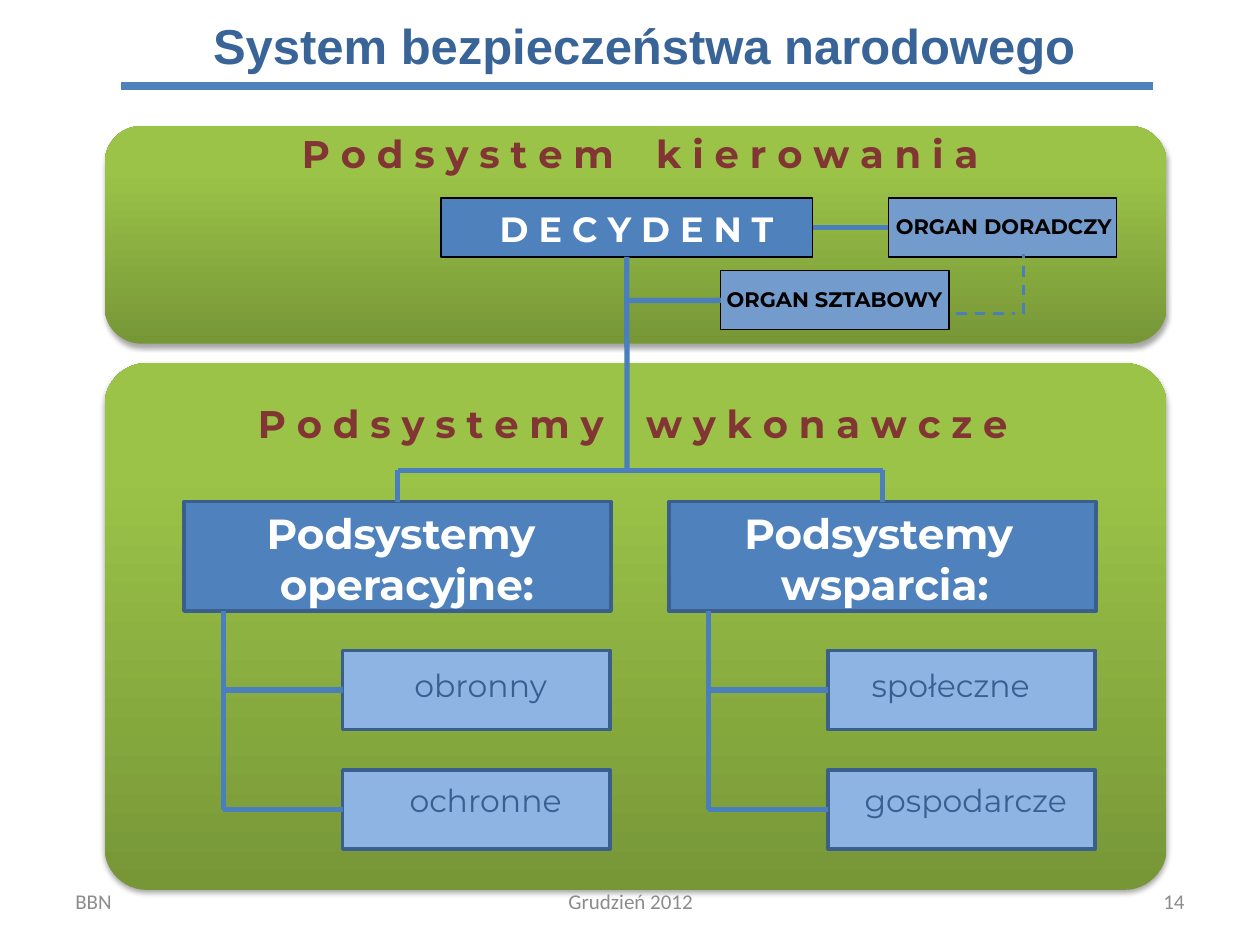
"""Build the slide on the national security system."""
import lxml.etree
import pptx
import pptx.dml.color
import pptx.enum.dml
import pptx.enum.shapes
import pptx.enum.text
import pptx.oxml
import pptx.oxml.ns
import pptx.util

Cm = pptx.util.Cm
Pt = pptx.util.Pt
RGBColor = pptx.dml.color.RGBColor
ALIGN = pptx.enum.text.PP_ALIGN
ANCHOR = pptx.enum.text.MSO_ANCHOR
SHAPE = pptx.enum.shapes.MSO_SHAPE
qn = pptx.oxml.ns.qn

TITLE_BLUE = RGBColor(0x39, 0x64, 0x97)
BLUE = RGBColor(0x4F, 0x81, 0xBD)
LINE_BLUE = RGBColor(0x4B, 0x7E, 0xBC)
BORDER_BLUE = RGBColor(0x3A, 0x5F, 0x8C)
ORGAN_BLUE = RGBColor(0x73, 0x9B, 0xCB)
LIGHT_BLUE = RGBColor(0x8E, 0xB4, 0xE3)
TEXT_BLUE = RGBColor(0x37, 0x60, 0x92)
DARK_GREEN = RGBColor(0x77, 0x97, 0x37)
LIGHT_GREEN = RGBColor(0x9B, 0xC3, 0x48)
MAROON = RGBColor(0x82, 0x36, 0x34)
GREY = RGBColor(0x8C, 0x8C, 0x8C)
WHITE = RGBColor(0xFF, 0xFF, 0xFF)
BLACK = RGBColor(0, 0, 0)

TITLE = {"name": "Arial", "size": Pt(28), "bold": True}
HEADING = {"name": "Montserrat", "size": Pt(22), "bold": True}
GROUP = {"name": "Montserrat", "size": Pt(24), "bold": True}
DECISION = {"name": "Montserrat", "size": Pt(20), "bold": True}
ORGAN = {"name": "Montserrat", "size": Pt(12), "bold": True}
MEMBER = {"name": "Montserrat", "size": Pt(18)}
FOOTER = {"name": "Calibri", "size": Pt(12)}

SHADOW = (
    '<a:effectLst xmlns:a="http://schemas.openxmlformats.org/drawingml/2006/main">'
    '<a:outerShdw blurRad="40000" dist="23000" dir="5400000" rotWithShape="0">'
    '<a:srgbClr val="000000"><a:alpha val="35000"/></a:srgbClr>'
    "</a:outerShdw></a:effectLst>"
)

GROUPS = [
    (1.6, "Podsystemy \voperacyjne:", -0.1,
     [("obronny", (0.38, 0.2, 4.8, 1.29)), ("ochronne", (0.38, 0.1, 5, 1.29))]),
    (11.38, "Podsystemy \vwsparcia:", -0.25,
     [("społeczne", (-0.18, 0.2, 5.31, 1.29)), ("gospodarcze", (-0.46, 0.1, 6.48, 1.29))]),
]


def inside(box, offset):
    """Return a box whose offset is measured from the corner of another box."""
    return (box[0] + offset[0], box[1] + offset[1], *offset[2:])


def add_text(slide, box, words, formats, color, align=ALIGN.CENTER, anchor=ANCHOR.TOP):
    """Add a text box; words after the first are set apart by one widened space."""
    frame = slide.shapes.add_textbox(*map(Cm, box)).text_frame
    frame.word_wrap = True
    frame.vertical_anchor = anchor
    paragraph = frame.paragraphs[0]
    paragraph.alignment = align
    paragraph.text = words[0]
    for word in words[1:]:
        gap = paragraph.add_run()
        gap.text = " "
        gap.font._element.set("spc", "1800")
        paragraph.add_run().text = word
    for run in paragraph.runs:
        for name, value in formats.items():
            setattr(run.font, name, value)
        run.font.color.rgb = color


def add_box(slide, box, fill, border, width):
    """Add a plain rectangle."""
    shape = slide.shapes.add_shape(SHAPE.RECTANGLE, *map(Cm, box))
    shape.shadow.inherit = False
    shape.fill.solid()
    shape.fill.fore_color.rgb = fill
    shape.line.color.rgb = border
    shape.line.width = Pt(width)
    return shape


def add_line(slide, start, end, color=LINE_BLUE, width=3, begin=None, finish=None):
    """Add a straight line, joined to a (shape, site) pair at either end if given."""
    connector = slide.shapes.add_connector(
        pptx.enum.shapes.MSO_CONNECTOR.STRAIGHT, *map(Cm, (*start, *end)))
    connector.line.color.rgb = color
    connector.line.width = Pt(width)
    lxml.etree.SubElement(connector._element.spPr, qn("a:effectLst"))
    if begin:
        connector.begin_connect(*begin)
    if finish:
        connector.end_connect(*finish)
    return connector


def add_panel(slide, box, rounding):
    """Add a green rounded panel with a soft shadow."""
    panel = slide.shapes.add_shape(SHAPE.ROUNDED_RECTANGLE, *map(Cm, box))
    panel.adjustments[0] = rounding
    panel.fill.gradient()
    panel.fill.gradient_angle = 90
    stops = zip(panel.fill.gradient_stops, (DARK_GREEN, LIGHT_GREEN), (0, 0.8))
    for stop, color, position in stops:
        stop.color.rgb = color
        stop.position = position
    panel.line.fill.background()
    panel._element.spPr.append(pptx.oxml.parse_xml(SHADOW))


def add_title(slide, box):
    """Add the title and the rule below it."""
    left, top = box[:2]
    add_text(slide, box, ["System bezpieczeństwa narodowego"], TITLE, TITLE_BLUE)
    add_line(slide, (left + 0.76, top + 1.55), (left + 21.56, top + 1.55), BLUE, 4.5)


def add_steering_panel(slide, box):
    """Add the steering subsystem and return the decision maker's rectangle."""
    left, top = box[:2]
    add_panel(slide, box, 0.17)
    add_text(slide, inside(box, (0.99, -0.05, 19.61, 1.19)),
             ["P o d s y s t e m", "k i e r o w a n i a"], HEADING, MAROON)
    decision = add_box(slide, inside(box, (6.78, 1.45, 7.49, 1.19)), BLUE, BLACK, 0.75)
    staff = add_box(slide, inside(box, (12.42, 2.92, 4.6, 1.19)), ORGAN_BLUE, BLACK, 0.75)
    advisers = add_box(slide, inside(box, (15.8, 1.45, 4.6, 1.19)), ORGAN_BLUE, BLACK, 0.75)
    add_line(slide, (left + 14.27, top + 2.05), (left + 15.8, top + 2.05),
             begin=(decision, 3), finish=(advisers, 1))
    add_line(slide, (left + 10.53, top + 3.52), (left + 12.42, top + 3.52),
             finish=(staff, 1))
    dashes = [((17.17, 3.78), (18.36, 3.78)), ((18.52, 3.78), (18.52, 2.59))]
    for start, end in dashes:
        dash = add_line(slide, inside(box, start), inside(box, end), width=1.5)
        dash.line.dash_style = pptx.enum.dml.MSO_LINE.DASH
    add_text(slide, inside(box, (7.32, 1.52, 6.81, 1.09)),
             ["D E C Y D E N T"], DECISION, WHITE)
    add_text(slide, inside(box, (12.29, 3.12, 5.46, 0.76)),
             ["ORGAN SZTABOWY"], ORGAN, BLACK, ALIGN.LEFT)
    add_text(slide, inside(box, (15.7, 1.65, 5.33, 0.76)),
             ["ORGAN DORADCZY"], ORGAN, BLACK, ALIGN.LEFT)
    return decision


def add_group(slide, box, title, title_shift, members):
    """Add a group's heading rectangle, its spine and its members."""
    left, top, width, height = box
    head = add_box(slide, box, BLUE, BORDER_BLUE, 2)
    add_text(slide, (left + title_shift, top, 9.19, 2.31), [title], GROUP, WHITE)
    middle = left + width / 2
    add_line(slide, (middle, top - 0.63), (middle, top), finish=(head, 0))
    spine = left + 0.79
    add_line(slide, (spine, top + height), (spine, top + 6.21))
    for index, (name, offset) in enumerate(members):
        member_box = (left + 3.2, top + 3 + index * 2.41, 5.39, 1.6)
        member = add_box(slide, member_box, LIGHT_BLUE, BORDER_BLUE, 2)
        center = member_box[1] + 0.8
        add_line(slide, (spine, center), (member_box[0], center), finish=(member, 1))
        add_text(slide, inside(member_box, offset), [name], MEMBER, TEXT_BLUE)


def add_executive_panel(slide, box, decision):
    """Add the executive subsystems, hung from the decision maker."""
    left, top = box[:2]
    add_panel(slide, box, 0.08)
    add_text(slide, inside(box, (1.45, 0.61, 18.39, 1.19)),
             ["P o d s y s t e m y", "w y k o n a w c z e"], HEADING, MAROON)
    bar = top + 2.16
    trunk = left + 10.53
    add_line(slide, (trunk, top), (trunk, bar), begin=(decision, 2))
    middles = [left + offset + 8.61 / 2 for offset, *_ in GROUPS]
    add_line(slide, (middles[0], bar), (middles[-1], bar))
    for offset, *content in GROUPS:
        add_group(slide, inside(box, (offset, 2.79, 8.61, 2.21)), *content)


def add_footer(slide, box):
    """Add the author, the date and the page number."""
    parts = [
        (0, 5.92, "BBN", ALIGN.LEFT),
        (7.42, 8.05, "Grudzień 2012", ALIGN.CENTER),
        (16.94, 5.92, "14", ALIGN.RIGHT),
    ]
    for offset, width, text, align in parts:
        add_text(slide, inside(box, (offset, 0, width, box[3])), [text],
                 FOOTER, GREY, align, ANCHOR.MIDDLE)


def main():
    """Build and save the presentation."""
    presentation = pptx.Presentation()
    presentation.slide_width = Cm(25.4)
    presentation.slide_height = Cm(19.05)
    slide = presentation.slides.add_slide(presentation.slide_layouts[6])
    add_title(slide, (1.68, 0.18, 22.61, 1.45))
    decision = add_steering_panel(slide, (2.11, 2.54, 21.41, 4.39))
    add_executive_panel(slide, (2.11, 7.32, 21.41, 10.62), decision)
    add_footer(slide, (1.27, 17.65, 22.86, 1.02))
    presentation.save("out.pptx")


if __name__ == "__main__":
    main()
